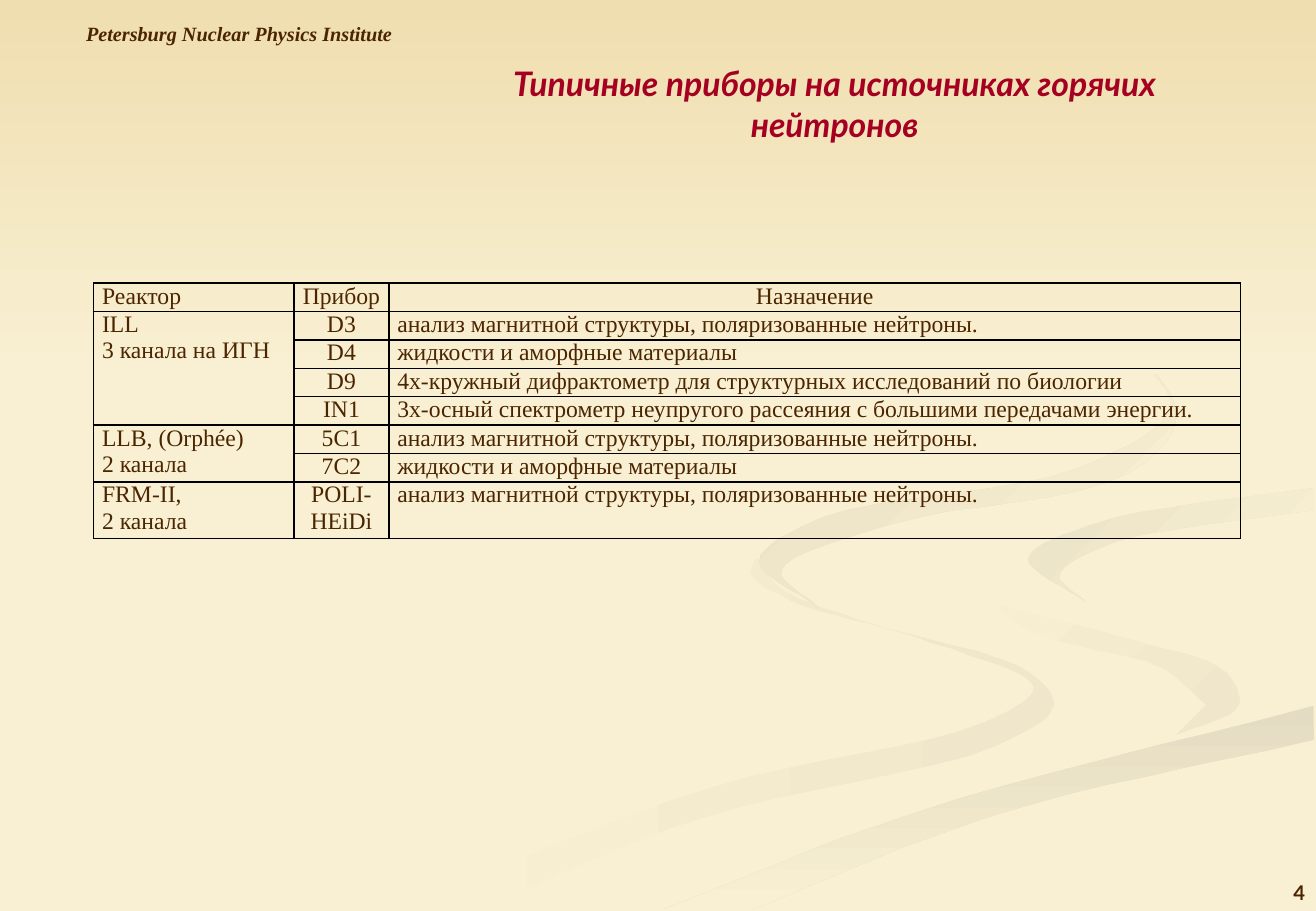
import math
from dataclasses import dataclass

import pptx
import pptx.dml.color
import pptx.enum.shapes
import pptx.enum.text
import pptx.oxml.ns
import pptx.shapes.base
import pptx.slide
import pptx.table
import pptx.util
from lxml import etree

RGB = pptx.dml.color.RGBColor
ALIGN = pptx.enum.text.PP_ALIGN
ANCHOR = pptx.enum.text.MSO_ANCHOR
Point = tuple[float, float]

CREAM = RGB(0xF9, 0xF0, 0xD3)
SAND = RGB(0xEF, 0xDE, 0xAF)
PALE = RGB(0xEF, 0xE6, 0xCB)
STONE = RGB(0xE4, 0xDC, 0xC2)
LINEN = RGB(0xEB, 0xE3, 0xC7)
FLAX = RGB(0xE8, 0xDF, 0xC4)
BROWN = RGB(0x4B, 0x25, 0x00)
CRIMSON = RGB(0xA5, 0x00, 0x21)

SERIF, SANS = "Times New Roman", "Lato"

# The slide is a grid of square cells, 100 to the inch
CELL = 9144
COLUMNS, ROWS = 1083, 750
CURVE_STEPS = 8


@dataclass
class Ribbon:
    start: RGB
    end: RGB
    angle: int  # clockwise degrees
    there: list[Point]  # one edge, then the other edge back
    back: list[Point]


@dataclass
class Label:
    text: str
    box: tuple[int, int, int, int]  # column, row, columns, rows
    font: str
    size: int
    color: RGB
    align: ALIGN = ALIGN.LEFT
    anchor: ANCHOR = ANCHOR.TOP
    italic: bool = True
    wrap: bool = True


@dataclass
class Reactor:
    name: str
    instruments: list[tuple[str, str]]


RIBBONS = [
    Ribbon(CREAM, PALE, 0,
           [(623, 459), (618, 472), (652, 495), (755, 525), (851, 566),
            (812, 594), (584, 649), (325, 749)],
           [(391, 749), (576, 674), (819, 614), (867, 581), (846, 553),
            (716, 513), (643, 485), (623, 459)]),
    Ribbon(CREAM, PALE, 45,
           [(784, 464), (807, 490), (921, 524), (1008, 553), (1019, 581), (968, 605)],
           [(993, 580), (954, 549), (845, 518), (784, 464)]),
    Ribbon(STONE, CREAM, 90,
           [(545, 749), (754, 669), (1081, 581)],
           [(1081, 609), (815, 672), (619, 749)]),
    Ribbon(LINEN, CREAM, 45,
           [(894, 496), (846, 460), (905, 430), (1081, 402)],
           [(1081, 420), (913, 448), (872, 474), (894, 496)]),
    Ribbon(FLAX, CREAM, 45,
           [(826, 233), (935, 291), (968, 344), (926, 391), (740, 430),
            (643, 470), (673, 500)],
           [(673, 500), (625, 462), (677, 426), (886, 386), (963, 335),
            (916, 279), (826, 233)]),
]

LABELS = [
    Label("Petersburg Nuclear Physics Institute", (61, 13, 273, 30),
          SERIF, 12, BROWN, wrap=False),
    Label("Типичные приборы на источниках горячих нейтронов", (376, 47, 622, 77),
          SANS, 20, CRIMSON, ALIGN.CENTER),
    Label("4", (831, 698, 253, 52), SANS, 12, BROWN, ALIGN.RIGHT,
          ANCHOR.BOTTOM, italic=False),
]

MAGNETIC = "анализ магнитной структуры, поляризованные нейтроны."
LIQUIDS = "жидкости и аморфные материалы"
REACTORS = [
    Reactor("Реактор", [("Прибор", "Назначение")]),
    Reactor("ILL\n3 канала на ИГН", [
        ("D3", MAGNETIC),
        ("D4", LIQUIDS),
        ("D9", "4х-кружный дифрактометр для структурных исследований по биологии"),
        ("IN1", "3х-осный спектрометр неупругого рассеяния с большими передачами энергии."),
    ]),
    Reactor("LLB, (Orphée)\n2 канала", [("5C1", MAGNETIC), ("7C2", LIQUIDS)]),
    Reactor("FRM-II,\n2 канала", [("POLI-HEiDi", MAGNETIC)]),
]
TABLE_COLUMNS = [165, 78, 701]
TABLE_ROW = 23.4


def cells(count: float) -> pptx.util.Emu:
    return pptx.util.Emu(round(count * CELL))


def blend(a: Point, b: Point, share: float) -> Point:
    return a[0] + (b[0] - a[0]) * share, a[1] + (b[1] - a[1]) * share


def smooth(edge: list[Point]) -> list[Point]:
    """Centripetal Catmull-Rom curve through the points of an edge."""
    knots = [blend(edge[1], edge[0], 2), *edge, blend(edge[-2], edge[-1], 2)]
    times = [0.0]
    for a, b in zip(knots, knots[1:]):
        times.append(times[-1] + math.sqrt(math.dist(a, b)))
    curve = [edge[0]]
    for first in range(len(edge) - 1):
        t = times[first:first + 4]
        for step in range(1, CURVE_STEPS + 1):
            now = t[1] + (t[2] - t[1]) * step / CURVE_STEPS
            level = knots[first:first + 4]
            for span, starts in ((1, (0, 1, 2)), (2, (0, 1)), (1, (1,))):
                level = [blend(level[i], level[i + 1], (now - t[k]) / (t[k + span] - t[k]))
                         for i, k in enumerate(starts)]
            curve.append(level[0])
    return curve


def paint(shape: pptx.shapes.base.BaseShape, start: RGB, end: RGB, angle: int) -> None:
    shape.shadow.inherit = False
    shape.line.fill.background()
    shape.fill.gradient()
    shape.fill.gradient_angle = (360 - angle) % 360
    for stop, color, position in zip(shape.fill.gradient_stops, (start, end), (0, 1)):
        stop.color.rgb = color
        stop.position = position


def draw_ribbon(slide: pptx.slide.Slide, ribbon: Ribbon) -> None:
    outline = smooth(ribbon.there) + smooth(ribbon.back)
    builder = slide.shapes.build_freeform(*outline[0], scale=CELL)
    builder.add_line_segments(outline[1:], close=True)
    paint(builder.convert_to_shape(), ribbon.start, ribbon.end, ribbon.angle)


def draw_label(slide: pptx.slide.Slide, label: Label) -> None:
    frame = slide.shapes.add_textbox(*map(cells, label.box)).text_frame
    frame.word_wrap = label.wrap
    frame.vertical_anchor = label.anchor
    paragraph = frame.paragraphs[0]
    paragraph.text = label.text
    paragraph.alignment = label.align
    font = paragraph.font
    font.name, font.size = label.font, pptx.util.Pt(label.size)
    font.bold, font.italic = True, label.italic
    font.color.rgb = label.color


def style_cell(cell: pptx.table._Cell) -> None:
    cell.margin_left = cell.margin_right = cells(7)
    cell.margin_top = cell.margin_bottom = 0
    properties = cell._tc.get_or_add_tcPr()
    for side in ("lnL", "lnR", "lnT", "lnB"):
        line = etree.SubElement(properties, pptx.oxml.ns.qn(f"a:{side}"), w="12700")
        fill = etree.SubElement(line, pptx.oxml.ns.qn("a:solidFill"))
        etree.SubElement(fill, pptx.oxml.ns.qn("a:srgbClr"), val="000000")
    cell.fill.background()


def write_cell(cell: pptx.table._Cell, text: str, align: ALIGN) -> None:
    cell.text = text
    for paragraph in cell.text_frame.paragraphs:
        paragraph.alignment = align
        paragraph.font.name, paragraph.font.size = SERIF, pptx.util.Pt(14)
        paragraph.font.color.rgb = BROWN


def draw_reactors(slide: pptx.slide.Slide) -> None:
    heights = [TABLE_ROW] * sum(len(reactor.instruments) for reactor in REACTORS)
    heights[-1] *= 2
    table = slide.shapes.add_table(
        len(heights), len(TABLE_COLUMNS), cells(77), cells(233),
        cells(sum(TABLE_COLUMNS)), cells(sum(heights))).table
    table.first_row = table.horz_banding = False
    for column, width in zip(table.columns, TABLE_COLUMNS):
        column.width = cells(width)
    for row, height in zip(table.rows, heights):
        row.height = cells(height)
    for cell in table.iter_cells():
        style_cell(cell)

    top = 0
    for reactor in REACTORS:
        last = top + len(reactor.instruments) - 1
        if last > top:
            table.cell(top, 0).merge(table.cell(last, 0))
        write_cell(table.cell(top, 0), reactor.name, ALIGN.LEFT)
        for row, (instrument, purpose) in enumerate(reactor.instruments, top):
            write_cell(table.cell(row, 1), instrument, ALIGN.CENTER)
            write_cell(table.cell(row, 2), purpose, ALIGN.LEFT if row else ALIGN.CENTER)
        top = last + 1


def main() -> None:
    deck = pptx.Presentation()
    deck.slide_width, deck.slide_height = cells(COLUMNS), cells(ROWS)
    slide = deck.slides.add_slide(deck.slide_layouts[6])

    # Backdrop
    slide.background.fill.solid()
    slide.background.fill.fore_color.rgb = CREAM
    for ribbon in RIBBONS:
        draw_ribbon(slide, ribbon)
    sky = slide.shapes.add_shape(
        pptx.enum.shapes.MSO_SHAPE.RECTANGLE, 0, 0, cells(COLUMNS), cells(308))
    paint(sky, SAND, CREAM, 90)

    # Content
    draw_reactors(slide)
    for label in LABELS:
        draw_label(slide, label)

    deck.save("out.pptx")


if __name__ == "__main__":
    main()
